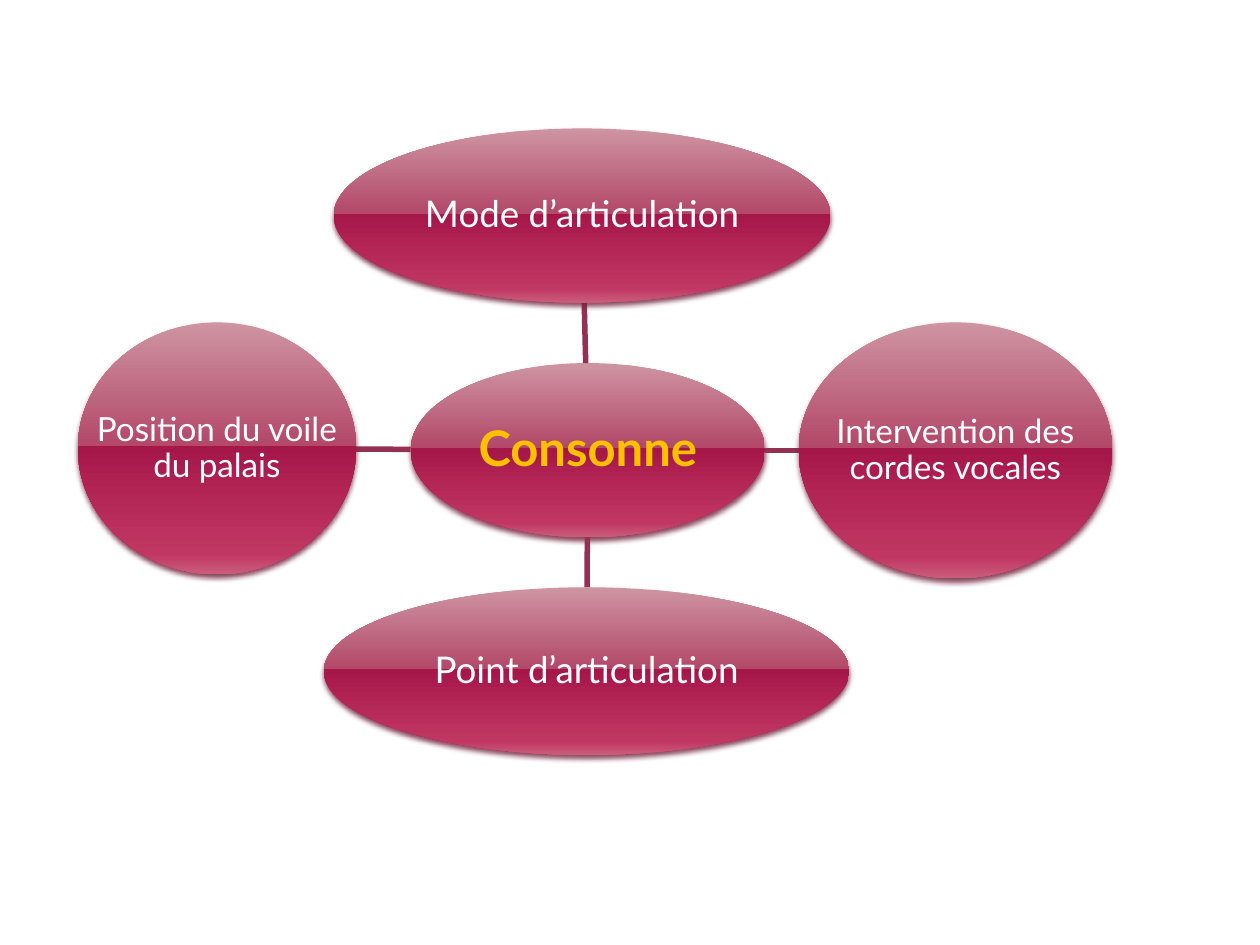
from dataclasses import dataclass
from math import hypot

from lxml import etree
from pptx import Presentation, util as u
from pptx.dml.color import RGBColor
from pptx.enum import shapes, text
from pptx.oxml import parse_xml
from pptx.oxml.ns import nsdecls, qn

HEX = {"link": "933153", "shade": "722640", "gold": "FFC000", "white": "FFFFFF"}
# Glossy gradient: position in percent, colour
STOPS = [(0, "CE94A2"), (49, "B34869"), (49, "A61749"), (92, "C13764"), (100, "CA5D7C")]


@dataclass
class Node:
    """An oval with its label; lengths in centimetres, size in points."""
    label: str
    x: float
    y: float
    w: float
    h: float
    size: float
    ink: str = "white"
    bold: bool = False
    pad: float = 0.03

    @property
    def mid(self) -> tuple[float, float]:
        return self.x + self.w / 2, self.y + self.h / 2

    @property
    def box(self) -> list[int]:
        return [u.Cm(v) for v in (self.x, self.y, self.w, self.h)]

    def edge(self, to: "Node") -> tuple[float, float]:
        """Point of the outline that faces another node."""
        (ax, ay), (bx, by) = self.mid, to.mid
        dx, dy = bx - ax, by - ay
        t = 1 / hypot(dx / (self.w / 2), dy / (self.h / 2))
        return ax + t * dx, ay + t * dy


HUB = Node("Consonne", 8.28, 7.32, 7.14, 3.51, 28, "gold", True, 0.05)
RING = [
    Node("Mode d’articulation", 6.73, 2.59, 10.01, 3.51, 21),
    Node("Intervention des cordes vocales", 16.1, 6.5, 6.32, 5.16, 19),
    Node("Point d’articulation", 6.53, 11.84, 10.59, 3.38, 21),
    Node("Position du voile du palais", 1.57, 6.5, 5.61, 5.08, 19),
]


def put(item, vals: dict) -> None:
    for key, val in vals.items():
        setattr(item, key, val)


def gloss(oval) -> None:
    """Gradient fill and soft shadow."""
    stops = "".join(f'<a:gs pos="{pos * 1000}"><a:srgbClr val="{tint}"/></a:gs>'
                    for pos, tint in STOPS)
    fill = parse_xml(f'<a:gradFill {nsdecls("a")} rotWithShape="1"><a:gsLst>{stops}</a:gsLst>'
                     '<a:lin ang="5400000" scaled="0"/></a:gradFill>')
    glow = parse_xml(f'<a:effectLst {nsdecls("a")}><a:outerShdw blurRad="{u.Pt(3.1)}" '
                     f'dist="{u.Pt(2)}" dir="5400000" algn="ctr" rotWithShape="0">'
                     f'<a:srgbClr val="{HEX["shade"]}"><a:alpha val="83000"/></a:srgbClr>'
                     '</a:outerShdw></a:effectLst>')
    oval.line.fill.background()
    props = oval.element.spPr
    props.find(qn("a:prstGeom")).addnext(fill)
    props.append(glow)


def draw(slide, node: Node) -> None:
    gloss(slide.shapes.add_shape(shapes.MSO_SHAPE.OVAL, *node.box))
    # The label spans the full width of the oval
    frame = slide.shapes.add_textbox(*node.box).text_frame
    pad = u.Cm(node.pad)
    put(frame, {"word_wrap": True, "vertical_anchor": text.MSO_ANCHOR.MIDDLE,
                "margin_left": pad, "margin_right": pad,
                "margin_top": pad, "margin_bottom": pad})
    para = frame.paragraphs[0]
    put(para, {"text": node.label, "alignment": text.PP_ALIGN.CENTER, "line_spacing": 0.9})
    font = para.runs[0].font
    put(font, {"name": "Lato", "size": u.Pt(node.size), "bold": node.bold})
    font.color.rgb = RGBColor.from_string(HEX[node.ink])


def link(slide, a: Node, b: Node) -> None:
    ends = [u.Cm(v) for v in (*a.edge(b), *b.edge(a))]
    line = slide.shapes.add_connector(shapes.MSO_CONNECTOR.STRAIGHT, *ends)
    line.line.width = u.Pt(3.15)
    line.line.color.rgb = RGBColor.from_string(HEX["link"])
    etree.SubElement(line.element.spPr, qn("a:effectLst"))


def main() -> None:
    deck = Presentation()
    put(deck, {"slide_width": u.Cm(25.4), "slide_height": u.Cm(19.05)})
    slide = deck.slides.add_slide(deck.slide_layouts[6])
    # Hub first, then each spoke with its node
    draw(slide, HUB)
    for node in RING:
        link(slide, HUB, node)
        draw(slide, node)
    deck.save("out.pptx")


if __name__ == "__main__":
    main()
